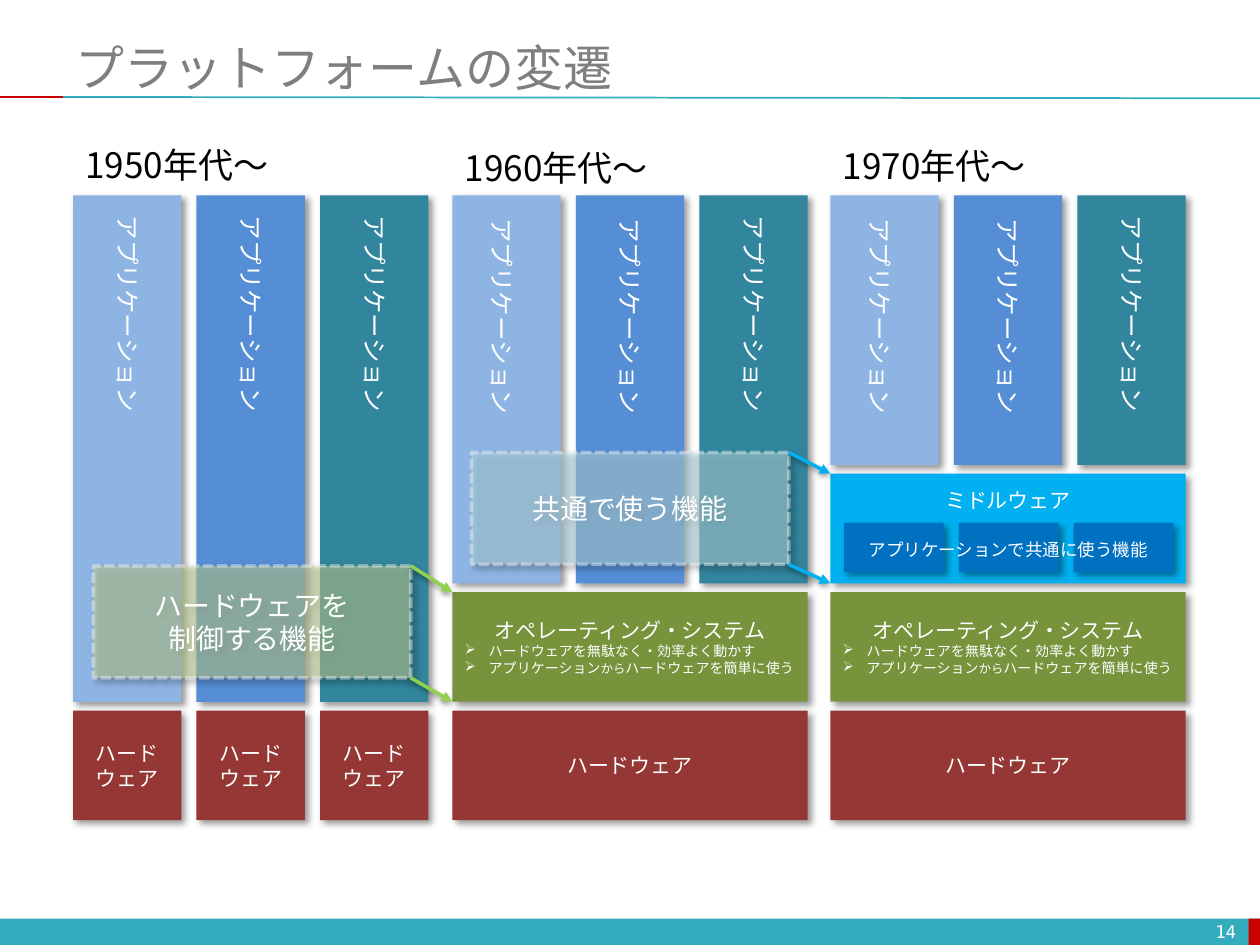
from collections import namedtuple
from dataclasses import dataclass

from lxml.etree import SubElement
from pptx import Presentation
from pptx.dml.color import RGBColor
from pptx.enum.dml import MSO_LINE
from pptx.enum.shapes import MSO_CONNECTOR, MSO_SHAPE
from pptx.enum.text import MSO_ANCHOR, PP_ALIGN
from pptx.oxml.ns import qn
from pptx.util import Inches, Pt

RECT, LINE, DASH = MSO_SHAPE.RECTANGLE, MSO_CONNECTOR.STRAIGHT, MSO_LINE.SQUARE_DOT
LEFT, MID, RIGHT = PP_ALIGN.LEFT, PP_ALIGN.CENTER, PP_ALIGN.RIGHT
TOP, CENTER = MSO_ANCHOR.TOP, MSO_ANCHOR.MIDDLE

Box = namedtuple("Box", "x y w h")


@dataclass(frozen=True)
class Theme:
    """Colours, fonts and type sizes of the slide."""
    teal: str = "33ACBD"
    red: str = "CC0000"
    gray: str = "7F7F7F"
    white: str = "FFFFFF"
    black: str = "000000"
    edge: str = "F2F2F2"
    apps: tuple = ("8EB4E3", "558ED5", "31859C")
    hard: str = "953735"
    system: str = "77933C"
    middle: str = "00B0F0"
    chip: str = "0070C0"
    lime: str = "92D050"
    moss: str = "C3D69B"
    ice: str = "B7DEE8"
    font: str = "Noto Sans CJK JP"
    head: str = "Calibri"
    mono: str = "DejaVu Sans Mono"
    title: int = 28
    era: int = 20
    share: int = 16
    app: int = 14
    label: int = 12
    note: int = 10
    point: int = 8
    tiny: int = 7


T = Theme()
WIDE, TALL = 10, 7.5
ERAS = (0.58, 3.59, 6.59)
SPAN, COL, STEP = 2.82, 0.86, 0.98
HEAD, BASE, ROW, PITCH, GAP = 1.55, 5.64, 0.87, 0.94, 0.07
CAST, SOFT = (40, 4, 3, 45), (38, 3.1, 1.6, 90)


def layer(x, level):
    """Return the full-width box of an era at a level above the hardware."""
    return Box(x, BASE - level * PITCH, SPAN, ROW)


def cells(box, step, wide):
    """Return three equally spaced boxes across a box."""
    return [Box(box.x + i * step, box.y, wide, box.h) for i in range(3)]


def shade(shape, cast=None):
    """Give a shape an outer shadow, or none at all."""
    effect = SubElement(shape._element.spPr, qn("a:effectLst"))
    if cast:
        alpha, blur, dist, angle = cast
        outer = SubElement(effect, qn("a:outerShdw"), blurRad=str(Pt(blur)),
                           dist=str(Pt(dist)), dir=str(angle * 60000),
                           algn="tl", rotWithShape="0")
        color = SubElement(outer, qn("a:srgbClr"), val=T.black)
        SubElement(color, qn("a:alpha"), val=str(alpha * 1000))


def style(para, size, color=T.white, align=MID, font=T.font):
    """Set the alignment and font of a paragraph."""
    para.alignment = align
    para.font.size, para.font.name = Pt(size), font
    para.font.color.rgb = RGBColor.from_string(color)
    props = para._p.pPr.find(qn("a:defRPr"))
    SubElement(props, qn("a:ea"), typeface=T.font)


def write(shape, text, size, anchor=CENTER, wrap=True, **look):
    """Write one paragraph per line of text into a shape."""
    frame = shape.text_frame
    frame.word_wrap, frame.vertical_anchor = wrap, anchor
    frame.text = text
    for para in frame.paragraphs:
        style(para, size, **look)


def block(slide, box, fill, cast=CAST):
    """Draw a plain filled rectangle."""
    shape = slide.shapes.add_shape(RECT, *map(Inches, box))
    shape.fill.solid()
    shape.fill.fore_color.rgb = RGBColor.from_string(fill)
    shape.line.fill.background()
    shade(shape, cast)
    return shape


def label(slide, box, text, size, **look):
    """Place a text box."""
    shape = slide.shapes.add_textbox(*map(Inches, box))
    write(shape, text, size, **look)
    return shape


def rule(slide, start, end, color, width, cast=None):
    """Draw a straight line."""
    line = slide.shapes.add_connector(LINE, *map(Inches, (*start, *end)))
    line.line.color.rgb = RGBColor.from_string(color)
    line.line.width = Pt(width)
    shade(line, cast)
    return line


def frame(slide, box):
    """Draw the title, its rule, the footer band and the page number."""
    foot, tip = box.h - 0.21, box.w - 0.09
    block(slide, Box(0, foot, box.w, 0.21), T.teal, None)
    block(slide, Box(tip, foot, 0.09, 0.21), T.red, None)
    rule(slide, (0.5, 0.77), (box.w, 0.78), T.teal, 1)
    rule(slide, (0, 0.77), (0.5, 0.77), T.red, 1)
    label(slide, Box(0.5, 0.3, 9.5, 0.46), "プラットフォームの変遷", T.title,
          color=T.gray, align=LEFT, font=T.head)
    label(slide, Box(tip - 2.33, foot - 0.02, 2.33, 0.24), "14", T.note,
          align=RIGHT, font=T.mono)


def apps(slide, box, shifts):
    """Draw three application columns with turned labels."""
    for cell, fill, (right, down) in zip(cells(box, STEP, COL), T.apps, shifts):
        block(slide, cell, fill)
        spot = Box(cell.x + COL / 2 - 0.885 + right, 2.32 + down, 1.77, 0.34)
        turned = label(slide, spot, "アプリケーション", T.app, anchor=TOP, wrap=False)
        turned.rotation = 90


def system(slide, box):
    """Draw the operating system layer with its two points."""
    shape = block(slide, box, T.system)
    write(shape, "オペレーティング・システム", T.label)
    for parts in (("ハードウェアを無駄なく・効率よく動かす",),
                  ("アプリケーション", "から", "ハードウェアを簡単に使う")):
        para = shape.text_frame.add_paragraph()
        props = para._p.get_or_add_pPr()
        props.set("marL", str(Inches(0.19)))
        props.set("indent", str(Inches(-0.19)))
        SubElement(props, qn("a:buChar"), char="➢")
        style(para, T.point, align=LEFT)
        for part in parts:
            run = para.add_run()
            run.text = part
            if part == "から":
                run.font.size = Pt(T.tiny)


def middle(slide, box):
    """Draw the middleware layer with its three chips."""
    block(slide, box, T.middle)
    inner = Box(box.x + 0.11, box.y + 0.39, box.w, 0.39)
    for cell in cells(inner, 0.91, 0.79):
        block(slide, cell, T.chip)
    label(slide, Box(box.x, box.y + 0.47, box.w, 0.27),
          "アプリケーションで共通に使う機能", T.note, anchor=TOP)
    label(slide, Box(box.x, box.y + 0.06, box.w, 0.3), "ミドルウェア", T.label, anchor=TOP)


def era(slide, x, level, text, down, shifts):
    """Draw one era: heading, applications and the layers below."""
    label(slide, Box(x, 1.09 + down, 1.74, 0.44), text, T.era, anchor=TOP,
          wrap=False, color=T.black, align=LEFT)
    base = layer(x, 0)
    if level:
        write(block(slide, base, T.hard), "ハードウェア", T.label)
    else:
        for cell in cells(base, STEP, COL):
            write(block(slide, cell, T.hard), "ハード\nウェア", T.label)
    for rank, draw in enumerate((system, middle)[:level], 1):
        draw(slide, layer(x, rank))
    apps(slide, Box(x, HEAD, SPAN, layer(x, level).y - GAP - HEAD), shifts)


def fade(fill, alpha):
    """Make the solid colour below an element translucent."""
    color = next(fill.iter(qn("a:srgbClr")))
    SubElement(color, qn("a:alpha"), val=str(alpha * 1000))


def share(slide, box, goal, text, fill, color):
    """Draw a shared function and the arrows to the layer it becomes."""
    shape = block(slide, box, fill)
    shape.line.color.rgb = RGBColor.from_string(T.edge)
    shape.line.width, shape.line.dash_style = Pt(2), DASH
    props = shape._element.spPr
    fade(props.find(qn("a:solidFill")), 55)
    fade(props.find(qn("a:ln")), 43)
    write(shape, text, T.share)
    for start, end in ((box.y, goal.y), (box.y + box.h, goal.y + goal.h)):
        arrow = rule(slide, (box.x + box.w, start), (goal.x, end), color, 2, SOFT)
        SubElement(arrow.line._get_or_add_ln(), qn("a:tailEnd"), type="triangle")


def main():
    """Build and save the slide."""
    deck = Presentation()
    deck.slide_width, deck.slide_height = Inches(WIDE), Inches(TALL)
    slide = deck.slides.add_slide(deck.slide_layouts[6])
    frame(slide, Box(0, 0, WIDE, TALL))
    even, bent = ((0, 0),) * 3, ((-0.04, 0.02), (0, 0.02), (0, 0))
    rows = (("1950年代〜", 0, even), ("1960年代〜", 0.02, bent), ("1970年代〜", 0.01, bent))
    for level, (x, row) in enumerate(zip(ERAS, rows)):
        era(slide, x, level, *row)
    share(slide, Box(ERAS[0] + 0.16, 4.49, 2.52, 0.89), layer(ERAS[1], 1),
          "ハードウェアを\n制御する機能", T.moss, T.lime)
    share(slide, Box(ERAS[1] + 0.15, 3.59, 2.52, 0.89), layer(ERAS[2], 2),
          "共通で使う機能", T.ice, T.middle)
    deck.save("out.pptx")


if __name__ == "__main__":
    main()
